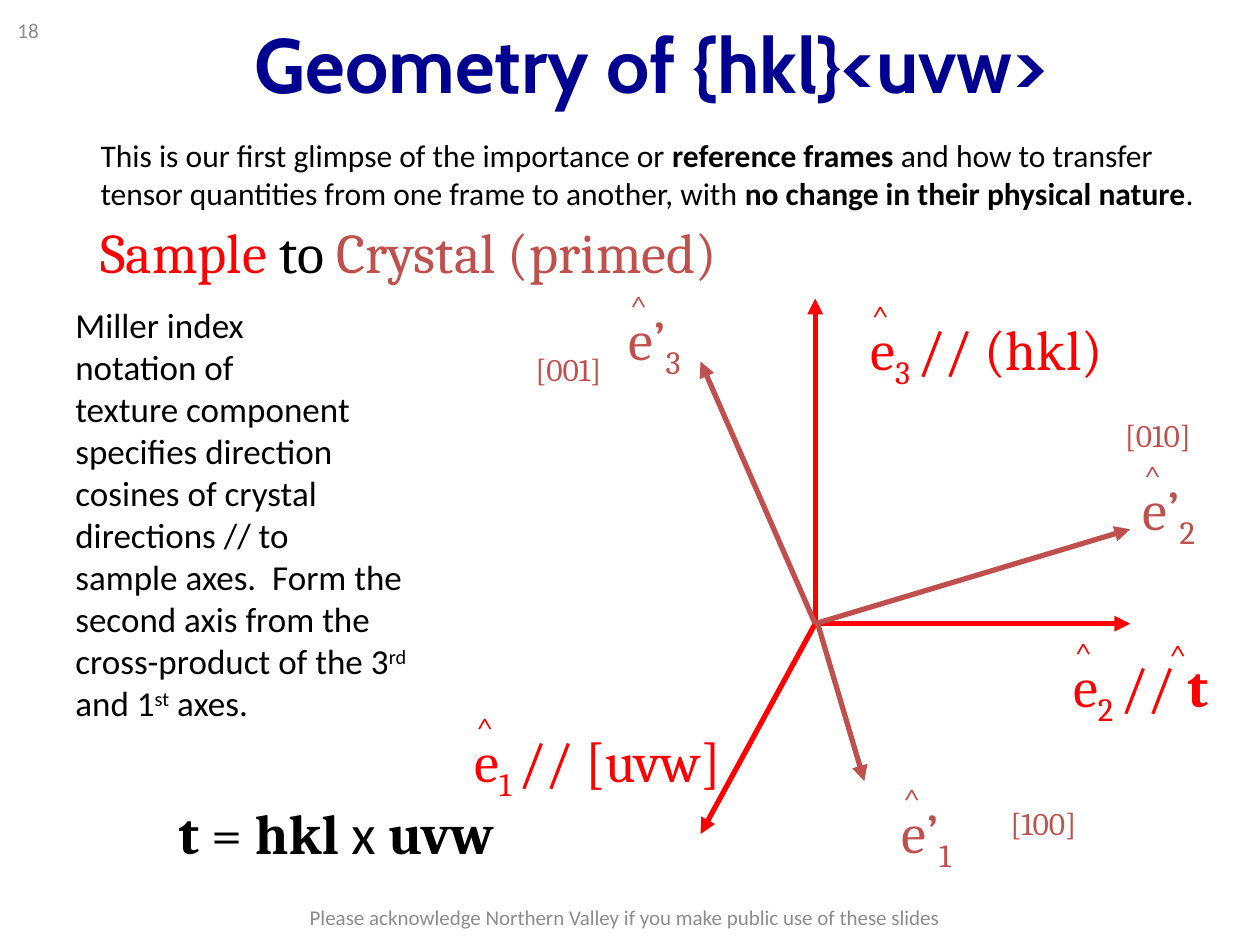
from lxml import etree
from pptx import Presentation
from pptx.dml.color import RGBColor
from pptx.enum import shapes, text
from pptx.oxml import ns
from pptx.util import Inches, Pt

RED = RGBColor(0xFF, 0, 0)
BRICK = RGBColor(0xC0, 0x50, 0x4D)
NAVY = RGBColor(0, 0, 0x90)
BLACK = RGBColor(0, 0, 0)
GRAY = RGBColor(0x8C, 0x8C, 0x8C)
SERIF, SANS, HEAD = "Cambria", "Calibri", "Cabin"

SUB, SUP = {"base": -25}, {"base": 30}
BOLD = {"bold": True}


def add_run(para, words, font, size, color, bold=False, base=0):
    """Add one run; base is the baseline shift in percent."""
    lines = words.split("\n")
    for num, line in enumerate(lines):
        if num:
            para.add_line_break()
        run = para.add_run()
        run.text = line
        run.font.name = font
        run.font.size = Pt(size)
        run.font.color.rgb = color
        run.font.bold = bold
        if base:
            run.font._element.set("baseline", str(base * 1000))


def add_text(slide, area, runs, font, size, color, wrap=False, bar=False):
    """Add a text box; each run is (words, changes to the base style).

    A bar is centred vertically in a fixed box; other boxes fit their text.
    """
    box = slide.shapes.add_textbox(*map(Inches, area))
    frame = box.text_frame
    frame.word_wrap = wrap
    if bar:
        frame.vertical_anchor = text.MSO_ANCHOR.MIDDLE
    else:
        frame.auto_size = text.MSO_AUTO_SIZE.SHAPE_TO_FIT_TEXT
    para = frame.paragraphs[0]
    for words, change in runs:
        style = {"font": font, "size": size, "color": color, **change}
        add_run(para, words, **style)
    return para


def add_bar(slide, area, words, font, size, color, center=True, **change):
    para = add_text(slide, area, [(words, change)], font, size, color,
                    wrap=True, bar=True)
    if center:
        para.alignment = text.PP_ALIGN.CENTER


def add_axis(slide, start, end, color):
    ends = map(Inches, (*start, *end))
    line = slide.shapes.add_connector(shapes.MSO_CONNECTOR.STRAIGHT, *ends)
    line.line.color.rgb = color
    line.line.width = Pt(3)
    tip = etree.SubElement(line.line._get_or_add_ln(), ns.qn("a:tailEnd"))
    tip.set("type", "triangle")
    etree.SubElement(line._element.spPr, ns.qn("a:effectLst"))


def add_hat(slide, left, top, color):
    add_text(slide, (left, top, 0.39, 0.5), [("^", {})], SERIF, 18, color)


def add_vector(slide, left, top, width, runs, color):
    """Add a unit vector's label with the hat above its letter."""
    add_text(slide, (left, top, width, 0.64), runs, SERIF, 32, color)
    add_hat(slide, left + 0.01, top - 0.14, color)


def add_axes(slide):
    hub = (6.47, 4.95)
    for end in ((6.47, 2.37), (8.97, 4.95), (5.56, 6.62)):
        add_axis(slide, hub, end, RED)
    for end in ((5.56, 2.87), (8.97, 4.2)):
        add_axis(slide, hub, end, BRICK)
    add_axis(slide, (6.49, 4.95), (6.86, 6.2), BRICK)


def add_labels(slide):
    sample = (
        (3.67, 5.72, 2.33, "1 ", [("// [uvw]", {})]),
        (8.42, 5.12, 1.37, "2 ", [("// ", {}), ("t", BOLD)]),
        (6.81, 2.45, 2.14, "3 ", [("// (hkl)", {})]),
    )
    for left, top, width, num, rest in sample:
        runs = [("e", {}), (num, SUB), *rest]
        add_vector(slide, left, top, width, runs, RED)
    add_hat(slide, 9.18, 5, RED)

    crystal = (
        (7.06, 6.28, "1", 7.92, 6.33, "[100]"),
        (8.97, 3.72, "2", 8.83, 3.25, "[010]"),
        (4.89, 2.37, "3", 4.15, 2.73, "[001]"),
    )
    for left, top, num, x, y, index in crystal:
        runs = [("e’", {}), (num, SUB)]
        add_vector(slide, left, top, 0.69, runs, BRICK)
        add_text(slide, (x, y, 1, 0.5), [(index, {})], SERIF, 18, BRICK)


def add_prose(slide):
    intro = [
        ("This is our first glimpse of the importance or ", {}),
        ("reference frames", BOLD),
        (" and how to transfer tensor quantities from one frame to another, "
         "with ", {}),
        ("no change in their physical nature", BOLD),
        (".", {}),
    ]
    add_text(slide, (0.7, 1.03, 9.13, 0.71), intro, SANS, 18, BLACK, wrap=True)

    frames = [("Sample ", {"color": RED}), ("to ", {}),
              ("Crystal (primed)", {"color": BRICK})]
    add_text(slide, (0.7, 1.68, 5.39, 0.64), frames, SERIF, 32, BLACK)

    miller = [
        ("Miller index\nnotation of\ntexture component\nspecifies direction\n"
         "cosines of crystal\ndirections // to\nsample axes.  Form the second "
         "axis from the cross-product of the 3", {}),
        ("rd", SUP), (" and 1", {}), ("st", SUP), (" axes.", {}),
    ]
    add_text(slide, (0.5, 2.36, 3, 3.47), miller, SANS, 20, BLACK, wrap=True)

    cross = [("t", BOLD), (" = ", {}), ("hkl ", BOLD),
             ("x ", {"font": SANS}), ("uvw", BOLD)]
    add_text(slide, (1.32, 6.29, 2.78, 0.64), cross, SERIF, 32, BLACK)


def main():
    deck = Presentation()
    deck.slide_width, deck.slide_height = Inches(10), Inches(7.5)
    slide = deck.slides.add_slide(deck.slide_layouts[6])
    add_bar(slide, (0.04, 0.04, 0.78, 0.4), "18", SANS, 12, GRAY, center=False)
    add_bar(slide, (0.92, 0, 8.5, 1), "Geometry of {hkl}<uvw>", HEAD, 44, NAVY,
            bold=True)
    add_axes(slide)
    add_labels(slide)
    add_prose(slide)
    add_bar(slide, (1.81, 7.08, 6.3, 0.4),
            "Please acknowledge Northern Valley if you make public use of "
            "these slides", SANS, 12, GRAY)
    deck.save("out.pptx")


if __name__ == "__main__":
    main()
